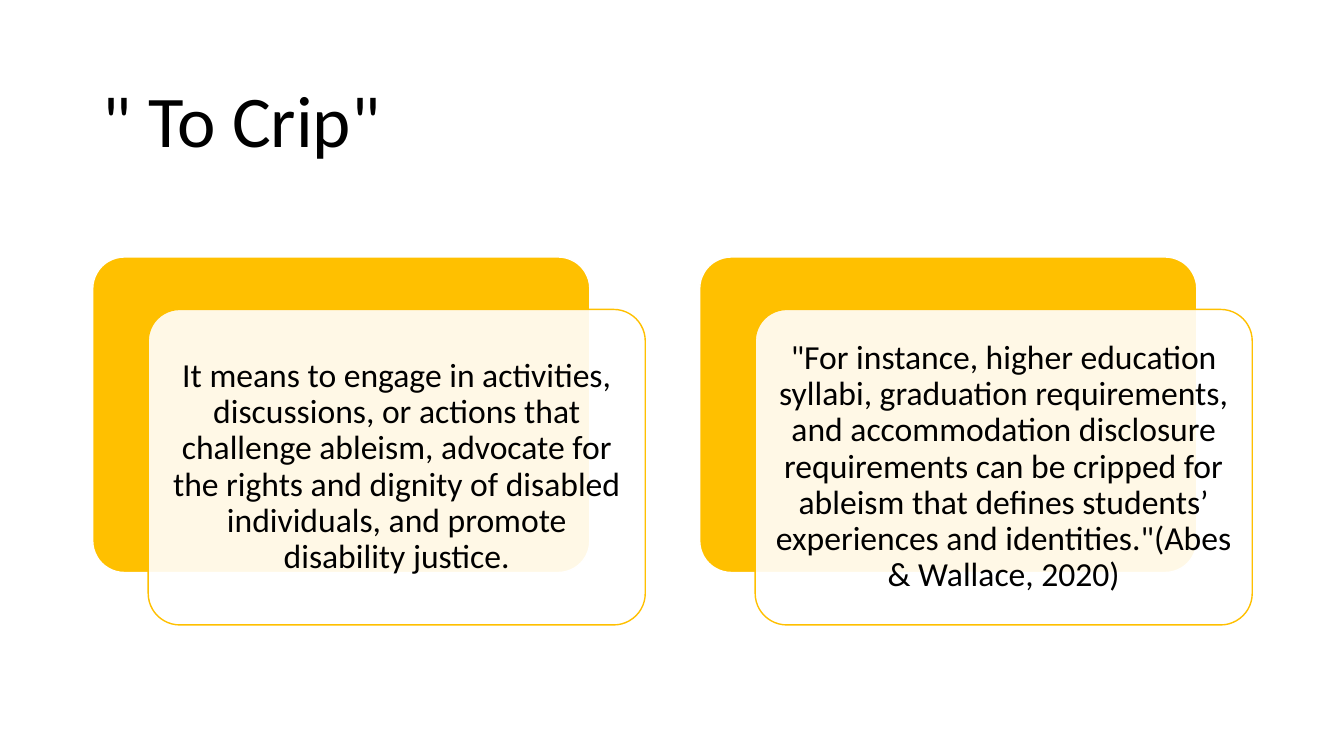
"""Build the "To Crip" slide: a title above two layered cards."""
import pptx
import pptx.dml.color
import pptx.enum.shapes
import pptx.enum.text
import pptx.oxml
import pptx.oxml.ns
import pptx.util
from pptx.util import Inches

GOLD = "FFC000"
WHITE = "FFFFFF"
CARD_WIDTH, CARD_HEIGHT = 4.93, 3.13
CARD_TOP = 2.55
OFFSET_X, OFFSET_Y = 0.55, 0.52
TEXT_MARGIN = 0.09
CARDS = [
    (0.92, "It means to engage in activities, discussions, or actions that challenge "
           "ableism, advocate for the rights and dignity of disabled individuals, and "
           "promote disability justice."),
    (6.94, "\"For instance, higher education syllabi, graduation requirements, and "
           "accommodation disclosure requirements can be cripped for ableism that defines "
           "students’ experiences and identities.\"(Abes & Wallace, 2020)"),
]


def color(value):
    return pptx.dml.color.RGBColor.from_string(value)


def add_text(page, text, left, top, width, height, size, align="LEFT", inset_x=0.1, inset_y=0.05):
    box = page.shapes.add_textbox(Inches(left), Inches(top), Inches(width), Inches(height))
    frame = box.text_frame
    frame.word_wrap = True
    frame.vertical_anchor = pptx.enum.text.MSO_ANCHOR.MIDDLE
    frame.margin_left = frame.margin_right = Inches(inset_x)
    frame.margin_top = frame.margin_bottom = Inches(inset_y)
    para = frame.paragraphs[0]
    para.alignment = pptx.enum.text.PP_ALIGN[align]
    para.line_spacing = 0.9
    span = para.add_run()
    span.text = text
    span.font.name = "Calibri"
    span.font.size = pptx.util.Pt(size)
    span.font.color.rgb = color("000000")


deck = pptx.Presentation()
deck.slide_width, deck.slide_height = Inches(13.33), Inches(7.5)
page = deck.slides.add_slide(deck.slide_layouts[6])

add_text(page, "\" To Crip\"", 0.92, 0.61, 11.5, 1.24, size=52)

for card_left, words in CARDS:
    front_left, front_top = card_left + OFFSET_X, CARD_TOP + OFFSET_Y
    layers = [
        (card_left, CARD_TOP, GOLD, WHITE, 100),
        (front_left, front_top, WHITE, GOLD, 90),
    ]
    for left, top, fill, line, opacity in layers:
        card = page.shapes.add_shape(
            pptx.enum.shapes.MSO_SHAPE.ROUNDED_RECTANGLE,
            Inches(left), Inches(top), Inches(CARD_WIDTH), Inches(CARD_HEIGHT))
        card.adjustments[0] = 0.1
        card.shadow.inherit = False
        card.fill.solid()
        card.fill.fore_color.rgb = color(fill)
        card.line.color.rgb = color(line)
        card.line.width = pptx.util.Pt(1)
        if opacity < 100:
            fill_color = card.fill._xPr.find(".//" + pptx.oxml.ns.qn("a:srgbClr"))
            alpha = pptx.oxml.parse_xml(
                f'<a:alpha {pptx.oxml.ns.nsdecls("a")} val="{opacity * 1000}"/>')
            fill_color.append(alpha)
    add_text(page, words, front_left + TEXT_MARGIN, front_top + TEXT_MARGIN,
             CARD_WIDTH - 2 * TEXT_MARGIN, CARD_HEIGHT - 2 * TEXT_MARGIN,
             size=24, align="CENTER", inset_y=0.1)

deck.save("out.pptx")
